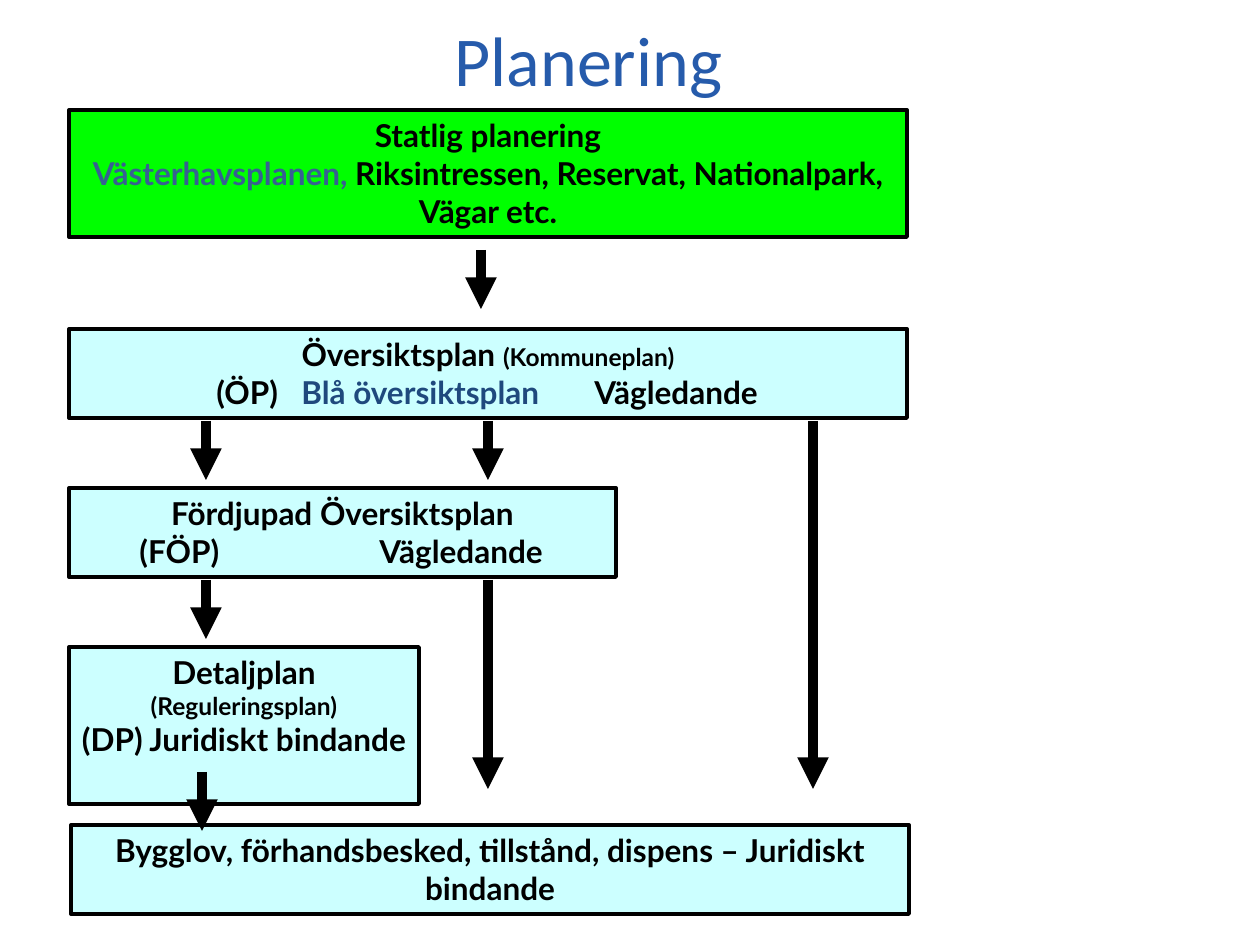
from dataclasses import dataclass

from lxml.etree import SubElement
from pptx import Presentation
from pptx.dml.color import RGBColor
from pptx.enum.shapes import MSO_CONNECTOR as Link, MSO_SHAPE as Form
from pptx.enum.text import MSO_ANCHOR as Anchor, PP_ALIGN as Align
from pptx.oxml.ns import qn
from pptx.slide import Slide
from pptx.util import Emu, Pt

SCALE = 914400 / 126
BLACK = RGBColor(0, 0, 0)
GREEN = RGBColor(0, 255, 0)
CYAN = RGBColor(0xCC, 0xFF, 0xFF)
NAVY = RGBColor(0x1F, 0x49, 0x7D)
STEEL = RGBColor(0x37, 0x60, 0x92)
BLUE = RGBColor(0x26, 0x5B, 0xAB)


@dataclass(frozen=True)
class Piece:
    text: str
    size: int = 18
    color: RGBColor = BLACK


@dataclass(frozen=True)
class Line:
    words: tuple[Piece, ...]
    tabs: tuple[int, ...] = ()


@dataclass(frozen=True)
class Box:
    left: int
    top: int
    width: int
    height: int
    lines: tuple[Line, ...]
    fill: RGBColor = CYAN


@dataclass(frozen=True)
class Arrow:
    x: int
    top: int
    end: int


BOXES = (
    Box(69, 110, 838, 127, (
        Line((Piece("Statlig planering"),)),
        Line((Piece("Västerhavsplanen, ", color=STEEL),
              Piece("Riksintressen, Reservat, Nationalpark, Vägar etc."))),
    ), GREEN),
    Box(69, 329, 838, 89, (
        Line((Piece("Översiktsplan "), Piece("(Kommuneplan)", 14))),
        Line((Piece("\t(ÖP)\t"), Piece("Blå översiktsplan\t", color=NAVY),
              Piece("Vägledande")), (135, 220, 513)),
    )),
    Box(69, 488, 547, 89, (
        Line((Piece("Fördjupad Översiktsplan"),)),
        Line((Piece("\t(FÖP)\tVägledande"),), (58, 298)),
    )),
    Box(69, 647, 350, 157, (
        Line((Piece("Detaljplan "), Piece("(Reguleringsplan)", 14))),
        Line((Piece("(DP) Juridiskt bindande"),)),
    )),
    Box(71, 825, 838, 89, (
        Line((Piece("Bygglov, förhandsbesked, tillstånd, dispens – "
                    "Juridiskt bindande"),)),
    )),
)

ARROWS = (
    Arrow(481, 250, 309),
    Arrow(206, 421, 480),
    Arrow(488, 421, 480),
    Arrow(813, 421, 789),
    Arrow(206, 580, 639),
    Arrow(488, 580, 789),
    Arrow(202, 772, 831),
)


def px(size: int) -> Emu:
    """Turn pixels into EMU."""
    return Emu(round(size * SCALE))


def draw_box(slide: Slide, box: Box) -> None:
    """Draw one plan level with its text."""
    shape = slide.shapes.add_shape(
        Form.RECTANGLE, px(box.left), px(box.top), px(box.width), px(box.height))
    shape.shadow.inherit = False
    shape.fill.solid()
    shape.fill.fore_color.rgb = box.fill
    shape.line.color.rgb = BLACK
    shape.line.width = Pt(2.25)
    frame = shape.text_frame
    frame.word_wrap = True
    frame.vertical_anchor = Anchor.TOP
    for i, line in enumerate(box.lines):
        para = frame.add_paragraph() if i else frame.paragraphs[0]
        para.alignment = Align.LEFT if line.tabs else Align.CENTER
        if line.tabs:
            stops = SubElement(para._p.get_or_add_pPr(), qn("a:tabLst"))
            for pos in line.tabs:
                SubElement(stops, qn("a:tab"), pos=str(px(pos)), algn="l")
        for word in line.words:
            run = para.add_run()
            run.text = word.text
            run.font.name = "Lato"
            run.font.size = Pt(word.size)
            run.font.bold = True
            run.font.color.rgb = word.color


def draw_arrow(slide: Slide, arrow: Arrow) -> None:
    """Draw one arrow pointing down."""
    link = slide.shapes.add_connector(
        Link.STRAIGHT, px(arrow.x), px(arrow.top), px(arrow.x), px(arrow.end))
    link.line.color.rgb = BLACK
    link.line.width = Pt(6)
    props = link._element.spPr
    SubElement(props.find(qn("a:ln")), qn("a:tailEnd"), type="triangle")
    SubElement(props, qn("a:effectLst"))


def draw_title(slide: Slide, text: str) -> None:
    """Place and format the title."""
    title = slide.shapes.title
    title.left, title.top = px(-43), px(-62)
    title.width, title.height = px(1203), px(169)
    frame = title.text_frame
    frame.text = text
    frame.vertical_anchor = Anchor.BOTTOM
    para = frame.paragraphs[0]
    para.alignment = Align.CENTER
    para._p.get_or_add_pPr().set("marL", str(px(60)))
    font = para.runs[0].font
    font.name = "Calibri"
    font.size = Pt(40)
    font.color.rgb = BLUE


def main() -> None:
    """Build and save the slide."""
    deck = Presentation()
    deck.slide_width, deck.slide_height = px(1260), px(945)
    slide = deck.slides.add_slide(deck.slide_layouts[5])
    draw_title(slide, "Planering")
    for box in BOXES:
        draw_box(slide, box)
    for arrow in ARROWS:
        draw_arrow(slide, arrow)
    deck.save("out.pptx")


if __name__ == "__main__":
    main()
